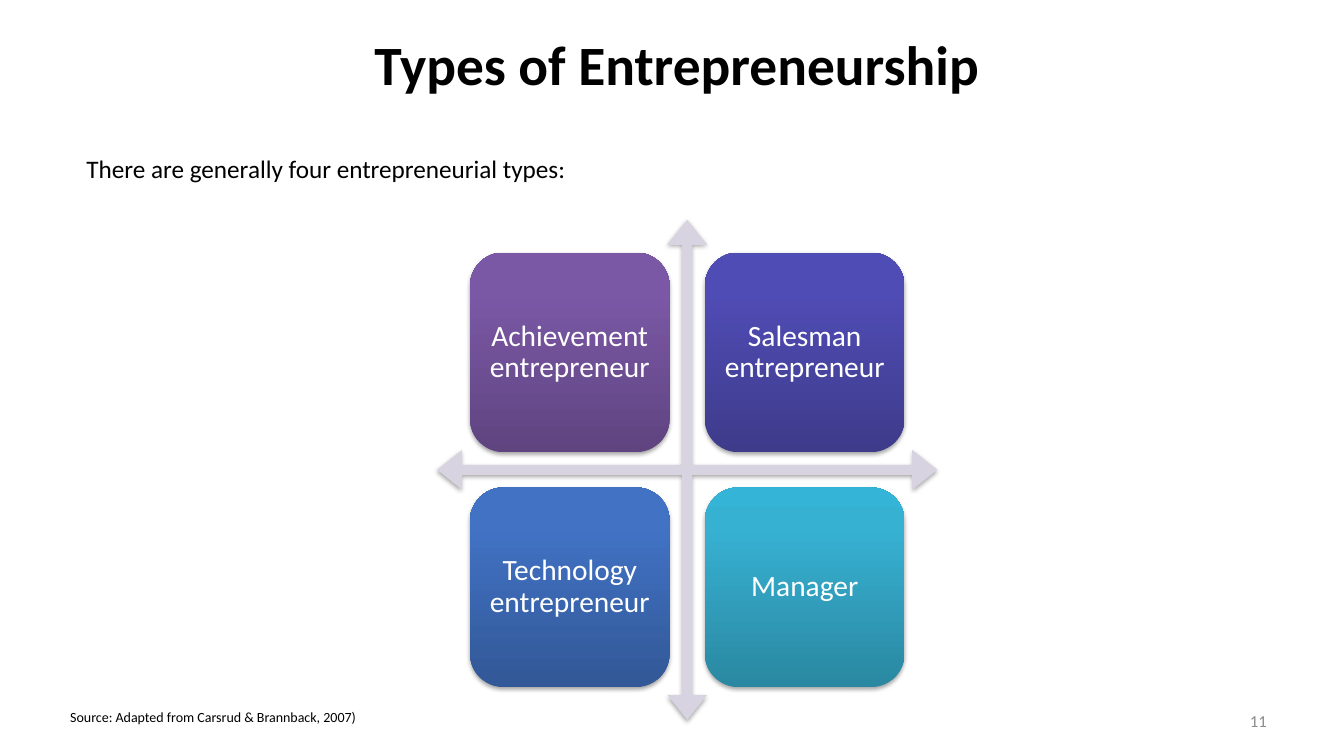
import copy
from dataclasses import dataclass

import pptx
import pptx.dml.color
import pptx.enum.shapes
import pptx.enum.text
import pptx.oxml
import pptx.oxml.ns
import pptx.util

Cm, Pt = pptx.util.Cm, pptx.util.Pt
Align = pptx.enum.text.PP_ALIGN
Anchor = pptx.enum.text.MSO_ANCHOR
Shape = pptx.enum.shapes.MSO_SHAPE


@dataclass(frozen=True)
class Theme:
    font: str = "Calibri"
    ink: str = "000000"
    muted: str = "8C8C8C"
    on_tile: str = "FFFFFF"
    axes: str = "D8D3E0"
    title: float = 39.6
    tile: float = 21
    intro: float = 18
    number: float = 12
    source: float = 10


def rgb(code):
    return pptx.dml.color.RGBColor.from_string(code)


def apply(target, values):
    for name, value in values.items():
        setattr(target, name, value)


class SlideBuilder:
    def __init__(self, slide, theme):
        self.slide, self.theme = slide, theme

    def set_text(self, frame, text, size, color, frame_format, paragraph_format, bold=False):
        apply(frame, {"auto_size": pptx.enum.text.MSO_AUTO_SIZE.NONE, **frame_format})
        paragraph = frame.paragraphs[0]
        apply(paragraph, paragraph_format)
        run = paragraph.add_run()
        run.text = text
        apply(run.font, {"name": self.theme.font, "size": Pt(size), "bold": bold})
        run.font.color.rgb = rgb(color)

    def title(self, text, box, indent):
        heading = self.slide.shapes.title
        apply(heading, dict(zip(("left", "top", "width", "height"), map(Cm, box))))
        self.set_text(heading.text_frame, text, self.theme.title, self.theme.ink,
                      {"vertical_anchor": Anchor.MIDDLE, "margin_left": Cm(indent)},
                      {"alignment": Align.CENTER}, bold=True)

    def label(self, text, box, size, color, align=Align.LEFT, anchor=Anchor.TOP, wrap=False):
        frame = self.slide.shapes.add_textbox(*map(Cm, box)).text_frame
        self.set_text(frame, text, size, color,
                      {"vertical_anchor": anchor, "word_wrap": wrap}, {"alignment": align})

    def shape(self, preset, box):
        shape = self.slide.shapes.add_shape(preset, *map(Cm, box))
        shape.line.fill.background()
        shape.shadow.inherit = False
        effects = shape._element.spPr.find(pptx.oxml.ns.qn("a:effectLst"))
        effects.append(pptx.oxml.parse_xml(
            f'<a:outerShdw {pptx.oxml.ns.nsdecls("a")} blurRad="{Pt(3.1)}" dist="{Pt(1.8)}" '
            'dir="5400000" rotWithShape="0"><a:srgbClr val="000000">'
            '<a:alpha val="35000"/></a:srgbClr></a:outerShdw>'))
        return shape

    def axes(self, box):
        cross = self.shape(Shape.QUAD_ARROW, box)
        for index, ratio in enumerate((0.02, 0.04, 0.05)):
            cross.adjustments[index] = ratio
        cross.fill.solid()
        cross.fill.fore_color.rgb = rgb(self.theme.axes)

    def tile(self, text, box, shades):
        tile = self.shape(Shape.ROUNDED_RECTANGLE, box)
        # Three-stop gradient, dark at the bottom
        tile.fill.gradient()
        tile.fill.gradient_angle = 90
        stops = tile._element.spPr.find(".//" + pptx.oxml.ns.qn("a:gsLst"))
        stops.append(copy.deepcopy(stops[0]))
        for stop, position, shade in zip(tile.fill.gradient_stops, (0, 0.8, 1), shades):
            stop.position = position
            stop.color.rgb = rgb(shade)
        margins = dict.fromkeys(
            ("margin_left", "margin_right", "margin_top", "margin_bottom"), Cm(0.22))
        self.set_text(tile.text_frame, text, self.theme.tile, self.theme.on_tile,
                      {"vertical_anchor": Anchor.MIDDLE, "word_wrap": True, **margins},
                      {"alignment": Align.CENTER, "line_spacing": 0.9})


TYPES = [
    ("Achievement entrepreneur", ("5F4480", "7B58A6", "7C57A8")),
    ("Salesman entrepreneur", ("3E3B8B", "504CB5", "4F4BB8")),
    ("Technology entrepreneur", ("325897", "4172C4", "3F72C7")),
    ("Manager", ("2A88A2", "37B1D2", "34B4D6")),
]
CENTER_X, CENTER_Y = 17.32, 11.84
AXES_SIZE, TILE_SIZE, TILE_GAP = 12.6, 5.03, 0.89


def main():
    deck = pptx.Presentation()
    apply(deck, {"slide_width": Cm(33.87), "slide_height": Cm(19.05)})
    theme = Theme()
    builder = SlideBuilder(deck.slides.add_slide(deck.slide_layouts[5]), theme)

    # Heading and introduction
    builder.title("Types of Entrepreneurship", (3.07, 0.56, 25.2, 2.06), indent=3.03)
    builder.label("There are generally four entrepreneurial types:",
                  (1.93, 3.73, 12.73, 1.02), theme.intro, theme.ink, Align.JUSTIFY)

    # Matrix of types around the crossed axes
    builder.axes((CENTER_X - AXES_SIZE / 2, CENTER_Y - AXES_SIZE / 2, AXES_SIZE, AXES_SIZE))
    pitch = TILE_SIZE + TILE_GAP
    for index, (name, shades) in enumerate(TYPES):
        row, column = divmod(index, 2)
        left = CENTER_X - TILE_GAP / 2 - TILE_SIZE + column * pitch
        top = CENTER_Y - TILE_GAP / 2 - TILE_SIZE + row * pitch
        builder.tile(name, (left, top, TILE_SIZE, TILE_SIZE), shades)

    # Source and slide number
    builder.label("Source: Adapted from Carsrud & Brannback, 2007)",
                  (1.52, 17.73, 7.92, 0.69), theme.source, theme.ink)
    builder.label("11", (24.28, 17.65, 7.9, 1.02), theme.number, theme.muted,
                  Align.RIGHT, Anchor.MIDDLE, wrap=True)

    deck.save("out.pptx")


if __name__ == "__main__":
    main()
